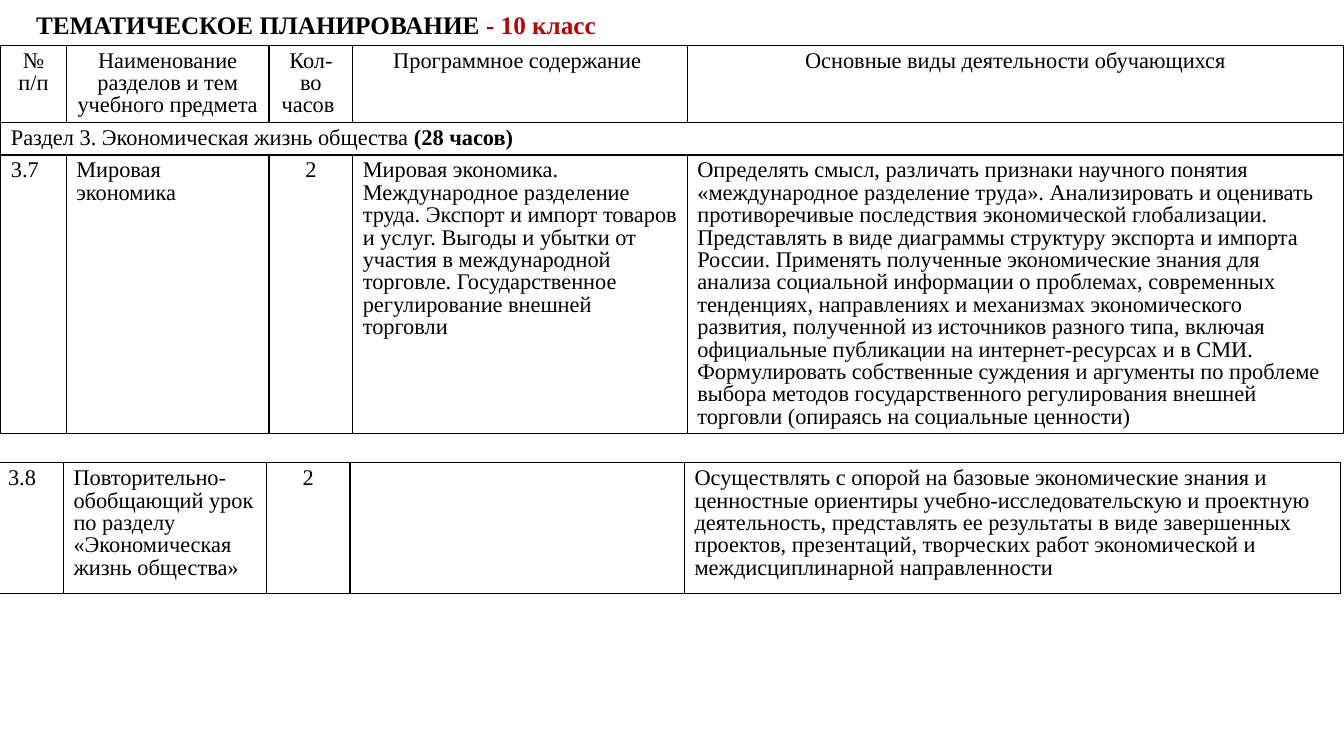
from lxml import etree
from pptx import Presentation
from pptx.dml.color import RGBColor
from pptx.enum import text
from pptx.oxml import ns
from pptx.util import Cm, Pt

BLACK = RGBColor(0x00, 0x00, 0x00)
WHITE = RGBColor(0xFF, 0xFF, 0xFF)
RED = RGBColor(0xC0, 0x00, 0x00)
FONT = "Times New Roman"

COL_WIDTHS = [1.65, 5.11, 2.11, 8.43, 16.54]
CENTERED_COL = 2

HEADER = ["№ п/п", "Наименование разделов и тем учебного предмета ",
          "Кол-во часов ", "Программное содержание ",
          "Основные виды деятельности обучающихся"]
SECTION = ["Раздел 3. Экономическая жизнь общества ", "(28 часов)"]
TOPIC_7 = [
    "3.7", "Мировая экономика", "2",
    "Мировая экономика. Международное разделение труда. Экспорт и импорт "
    "товаров и услуг. Выгоды и убытки от участия в международной торговле. "
    "Государственное регулирование внешней торговли",
    "Определять смысл, различать признаки научного понятия «международное "
    "разделение труда». Анализировать и оценивать противоречивые последствия "
    "экономической глобализации. Представлять в виде диаграммы структуру "
    "экспорта и импорта России. Применять полученные экономические знания для "
    "анализа социальной информации о проблемах, современных тенденциях, "
    "направлениях и механизмах экономического развития, полученной из "
    "источников разного типа, включая официальные публикации на "
    "интернет-ресурсах и в СМИ. Формулировать собственные суждения и аргументы "
    "по проблеме выбора методов государственного регулирования внешней "
    "торговли (опираясь на социальные ценности)"]
TOPIC_8 = [
    "3.8", "Повторительно-обобщающий урок по разделу «Экономическая жизнь "
    "общества»", "2", "",
    "Осуществлять с опорой на базовые экономические знания и ценностные "
    "ориентиры учебно-исследовательскую и проектную деятельность, представлять "
    "ее результаты в виде завершенных проектов, презентаций, творческих работ "
    "экономической и междисциплинарной направленности"]


def add_run(p, words, size, color=BLACK, bold=False):
    r = p.add_run()
    r.text = words
    r.font.name = FONT
    r.font.size = Pt(size)
    r.font.bold = bold
    r.font.color.rgb = color


def style_cell(cell):
    """Black 1 pt borders on a white fill."""
    tc_pr = cell._tc.get_or_add_tcPr()
    for side in ("a:lnL", "a:lnR", "a:lnT", "a:lnB"):
        ln = etree.SubElement(tc_pr, ns.qn(side), w=str(Pt(1)))
        fill = etree.SubElement(ln, ns.qn("a:solidFill"))
        etree.SubElement(fill, ns.qn("a:srgbClr"), val=str(BLACK))
    cell.fill.solid()
    cell.fill.fore_color.rgb = WHITE


def fill_cell(cell, words, centered=False, bold_tail=""):
    p = cell.text_frame.paragraphs[0]
    p.line_spacing = 0.9
    p.alignment = text.PP_ALIGN.CENTER if centered else text.PP_ALIGN.LEFT
    if words:
        add_run(p, words, 16)
    if bold_tail:
        add_run(p, bold_tail, 16, bold=True)


def add_plan_table(slide, left, top, row_heights):
    """Empty bordered table with the shared plan columns."""
    table = slide.shapes.add_table(
        len(row_heights), len(COL_WIDTHS), Cm(left), Cm(top),
        Cm(sum(COL_WIDTHS)), Cm(sum(row_heights))).table
    table.first_row = table.horz_banding = False
    for col, width in zip(table.columns, COL_WIDTHS):
        col.width = Cm(width)
    for row, height in zip(table.rows, row_heights):
        row.height = Cm(height)
    for cell in table.iter_cells():
        style_cell(cell)
    return table


def fill_row(table, row, texts, header=False):
    for col, words in enumerate(texts):
        fill_cell(table.cell(row, col), words, header or col == CENTERED_COL)


def add_title(slide, left, top, width, height):
    tf = slide.shapes.add_textbox(
        Cm(left), Cm(top), Cm(width), Cm(height)).text_frame
    tf.word_wrap = True
    tf.auto_size = text.MSO_AUTO_SIZE.SHAPE_TO_FIT_TEXT
    p = tf.paragraphs[0]
    add_run(p, "ТЕМАТИЧЕСКОЕ ПЛАНИРОВАНИЕ ", 18, bold=True)
    add_run(p, "- 10 класс", 18, RED, bold=True)


def add_section_table(slide, left, top):
    table = add_plan_table(slide, left, top, [1.93, 0.82, 7.02])
    fill_row(table, 0, HEADER, header=True)
    table.cell(1, 0).merge(table.cell(1, len(COL_WIDTHS) - 1))
    fill_cell(table.cell(1, 0), SECTION[0], bold_tail=SECTION[1])
    fill_row(table, 2, TOPIC_7)


def add_review_table(slide, left, top):
    table = add_plan_table(slide, left, top, [3.3])
    fill_row(table, 0, TOPIC_8)


def main():
    prs = Presentation()
    prs.slide_width, prs.slide_height = Cm(33.87), Cm(19.05)
    slide = prs.slides.add_slide(prs.slide_layouts[6])
    add_section_table(slide, 0.02, 1.14)
    add_title(slide, 0.66, 0.1, 16.92, 1.02)
    add_review_table(slide, -0.05, 11.66)
    prs.save("out.pptx")


if __name__ == "__main__":
    main()
